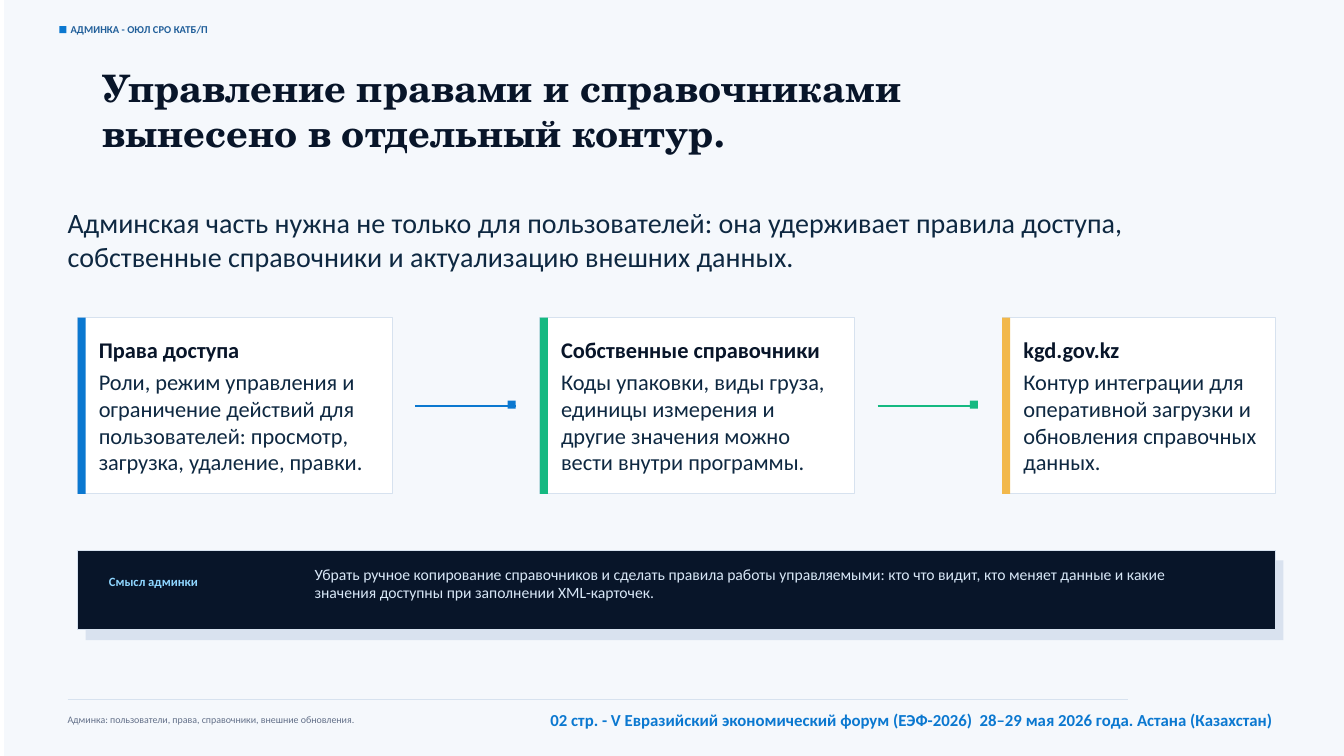
from pptx import Presentation
from pptx.dml.color import RGBColor
from pptx.enum.shapes import MSO_CONNECTOR, MSO_SHAPE
from pptx.enum.text import MSO_ANCHOR, MSO_AUTO_SIZE, PP_ALIGN
from pptx.util import Inches, Pt
from lxml import etree

RECT = MSO_SHAPE.RECTANGLE
STRAIGHT = MSO_CONNECTOR.STRAIGHT
TOP = MSO_ANCHOR.TOP
NO_AUTOFIT = MSO_AUTO_SIZE.NONE
LEFT, RIGHT = PP_ALIGN.LEFT, PP_ALIGN.RIGHT
DRAWING_NS = "http://schemas.openxmlformats.org/drawingml/2006/main"

SLIDE_W, SLIDE_H = 13.33, 7.5
MARGIN = 0.67
BODY_FONT, TITLE_FONT = "Calibri", "TeX Gyre Schola"
INK, TEXT, BLUE, GREEN, AMBER = "081529", "0E2841", "0B78D0", "15B981", "F2B84B"
WHITE, PAPER, BORDER, SHADE = "FFFFFF", "F5F8FC", "D7E2EF", "D9E2EF"

CARDS_LEFT, CARDS_TOP, CARD_H = 0.77, 3.15, 1.75
CARDS_W = 11.88
CARD_PITCH = 4.585
STRIPE = 0.08
CARDS = [
    (3.12, BLUE, "Права доступа",
     "Роли, режим управления и ограничение действий для пользователей: "
     "просмотр, загрузка, удаление, правки."),
    (3.12, GREEN, "Собственные справочники",
     "Коды упаковки, виды груза, единицы измерения и другие значения "
     "можно вести внутри программы."),
    (2.71, AMBER, "kgd.gov.kz",
     "Контур интеграции для оперативной загрузки и обновления справочных данных."),
]


def rgb(hex_color):
    return RGBColor.from_string(hex_color)


def add_block(slide, box, fill, border=None):
    block = slide.shapes.add_shape(RECT, *map(Inches, box))
    block.shadow.inherit = False
    block.fill.solid()
    block.fill.fore_color.rgb = rgb(fill)
    if border:
        block.line.color.rgb = rgb(border)
        block.line.width = Pt(0.75)
    else:
        block.line.fill.background()


def add_rule(slide, left, right, y, color, weight):
    rule = slide.shapes.add_connector(
        STRAIGHT, Inches(left), Inches(y), Inches(right), Inches(y))
    rule.line.color.rgb = rgb(color)
    rule.line.width = Pt(weight)
    etree.SubElement(rule._element.spPr, f"{{{DRAWING_NS}}}effectLst")


def write(holder, text, size, color, bold=False, font=BODY_FONT, align=LEFT):
    frame = holder.text_frame
    frame_format = {
        "word_wrap": True, "auto_size": NO_AUTOFIT, "vertical_anchor": TOP,
        "margin_left": 0, "margin_top": 0, "margin_right": 0, "margin_bottom": 0,
    }
    for name, value in frame_format.items():
        setattr(frame, name, value)
    paragraph = frame.paragraphs[0]
    paragraph.alignment = align
    run = paragraph.add_run()
    run.text = text
    for name, value in {"name": font, "size": Pt(size), "bold": bold}.items():
        setattr(run.font, name, value)
    run.font.color.rgb = rgb(color)


def add_text(slide, box, text, size, color, **style):
    write(slide.shapes.add_textbox(*map(Inches, box)), text, size, color, **style)


def add_header(slide, left, top):
    add_block(slide, (left, top, 0.07, 0.07), BLUE)
    add_text(slide, (left + 0.11, top - 0.03, 3.75, 0.19),
             "АДМИНКА - ОЮЛ СРО КАТБ/П", 7.5, "215F9A", bold=True)


def add_title(slide, box):
    title = slide.shapes.title
    for name, value in zip(("left", "top", "width", "height"), box):
        setattr(title, name, Inches(value))
    write(title, "Управление правами и справочниками вынесено в отдельный контур.",
          27, INK, bold=True, font=TITLE_FONT)


def add_card(slide, box, accent, heading, description):
    left, top, width, height = box
    inner_left, inner_width = left + 0.21, width - 0.35
    add_block(slide, box, WHITE, BORDER)
    add_block(slide, (left, top, STRIPE, height), accent)
    add_text(slide, (inner_left, top + 0.18, inner_width, 0.25),
             heading, 16, INK, bold=True)
    add_text(slide, (inner_left, top + 0.5, inner_width, 1.15),
             description, 16, TEXT)


def add_link(slide, left, right, y, color):
    """Draw a line that ends in a small square."""
    end = 0.08
    add_rule(slide, left, right, y, color, 1.5)
    add_block(slide, (right - end, y - end / 2 - 0.01, end, end), color)


def add_card_row(slide, left, top, height):
    for index, (width, accent, heading, description) in enumerate(CARDS):
        card_left = left + index * CARD_PITCH
        add_card(slide, (card_left, top, width, height), accent, heading, description)
        if index < len(CARDS) - 1:
            add_link(slide, card_left + width + 0.23, card_left + CARD_PITCH - 0.24,
                     top + height / 2, accent)


def add_summary(slide, box):
    left, top, width, height = box
    add_block(slide, (left + 0.08, top + 0.1, width, height), SHADE)
    add_block(slide, box, INK, BORDER)
    add_text(slide, (left + 0.31, top + 0.23, 1.77, 0.23),
             "Смысл админки", 9, "8FD6FF", bold=True)
    add_text(slide, (left + 2.35, top + 0.14, 8.54, 0.46),
             "Убрать ручное копирование справочников и сделать правила работы "
             "управляемыми: кто что видит, кто меняет данные и какие значения "
             "доступны при заполнении XML-карточек.", 11.2, "D8E7F7")


def add_footer(slide, left, top):
    add_rule(slide, left, left + 10.52, top, BORDER, 0.75)
    add_text(slide, (left, top + 0.14, 4.5, 0.19),
             "Админка: пользователи, права, справочники, внешние обновления.",
             7.1, "637089")
    add_text(slide, (left + 4.6, top + 0.1, 7.36, 0.25),
             "02 стр. - V Евразийский экономический форум (ЕЭФ-2026)  "
             "28–29 мая 2026 года. Астана (Казахстан)",
             12, BLUE, bold=True, align=RIGHT)


def main():
    deck = Presentation()
    deck.slide_width, deck.slide_height = Inches(SLIDE_W), Inches(SLIDE_H)
    slide = deck.slides.add_slide(deck.slide_layouts.get_by_name("Title Only"))
    add_block(slide, (0.04, 0, SLIDE_W - 0.04, SLIDE_H), PAPER)
    # The title placeholder is created first, so bring it above the background.
    slide.shapes._spTree.append(slide.shapes.title._element)
    add_header(slide, 0.59, 0.26)
    add_title(slide, (1.02, 0.64, 8.96, 1))
    add_text(slide, (MARGIN, 2.04, 11.54, 0.54),
             "Админская часть нужна не только для пользователей: она удерживает "
             "правила доступа, собственные справочники и актуализацию внешних данных.",
             20, TEXT)
    add_card_row(slide, CARDS_LEFT, CARDS_TOP, CARD_H)
    add_summary(slide, (CARDS_LEFT, 5.46, CARDS_W, 0.79))
    add_footer(slide, MARGIN, 6.94)
    deck.save("out.pptx")


if __name__ == "__main__":
    main()
